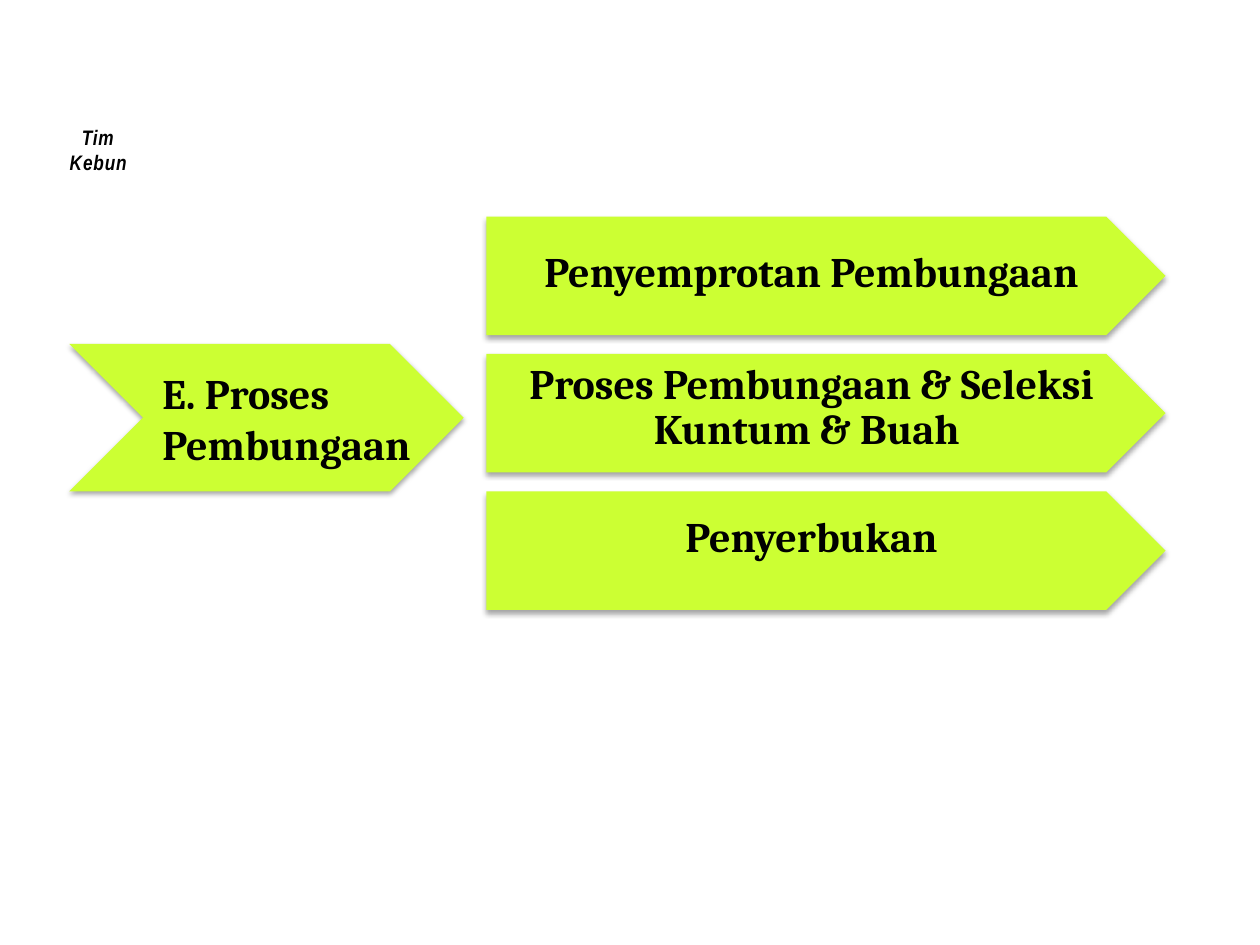
from lxml import etree
from pptx import Presentation
from pptx.dml.color import RGBColor
from pptx.enum.shapes import MSO_SHAPE
from pptx.enum.text import MSO_ANCHOR, PP_ALIGN
from pptx.oxml import parse_xml
from pptx.oxml.ns import nsdecls
from pptx.util import Inches, Pt

CHEVRON, PENTAGON = MSO_SHAPE.CHEVRON, MSO_SHAPE.PENTAGON
LEFT, CENTER = PP_ALIGN.LEFT, PP_ALIGN.CENTER
TOP, MIDDLE = MSO_ANCHOR.TOP, MSO_ANCHOR.MIDDLE

LIME, BLACK = "CCFF33", "000000"
SHADOW = (
    f'<a:effectLst {nsdecls("a")}>'
    '<a:outerShdw blurRad="39370" dist="22860" dir="5400000" rotWithShape="0">'
    f'<a:srgbClr val="{BLACK}"><a:alpha val="35000"/></a:srgbClr>'
    '</a:outerShdw></a:effectLst>'
)

presentation = Presentation()
presentation.slide_width, presentation.slide_height = Inches(10), Inches(7.5)
slide = presentation.slides.add_slide(presentation.slide_layouts[6])


def add_arrow(kind, left, top, width, height):
    shape = slide.shapes.add_shape(
        kind, Inches(left), Inches(top), Inches(width), Inches(height))
    shape.fill.solid()
    shape.fill.fore_color.rgb = RGBColor.from_string(LIME)
    shape.line.fill.background()
    shape._element.spPr.append(parse_xml(SHADOW))


def add_text(text, left, top, width, height, size=24, font="Cambria",
             align=CENTER, anchor=MIDDLE, italic=False, spacing=1.0):
    box = slide.shapes.add_textbox(
        Inches(left), Inches(top), Inches(width), Inches(height))
    frame = box.text_frame
    frame.word_wrap = True
    frame.vertical_anchor = anchor
    paragraph = frame.paragraphs[0]
    paragraph.alignment = align
    paragraph.line_spacing = spacing
    run = paragraph.add_run()
    run.text = text
    run.font.name, run.font.size = font, Pt(size)
    run.font.bold, run.font.italic = True, italic
    run.font.color.rgb = RGBColor.from_string(BLACK)
    return run


# Main process on the left
add_arrow(CHEVRON, 0.55, 2.73, 3.13, 1.17)
add_text("E. Proses Pembungaan", 1.19, 2.97, 2.22, 0.7, align=LEFT)

# Steps stacked on the right: label, line spacing, label shift from the arrow top
STEP_LEFT, STEP_TOP, STEP_PITCH = 3.86, 1.72, 1.09
steps = [
    ("Penyemprotan Pembungaan", 1.0, 0),
    ("Proses Pembungaan & Seleksi Kuntum & Buah ", 0.9, 0),
    ("Penyerbukan", 1.0, -0.08),
]
for row, (label, spacing, shift) in enumerate(steps):
    top = STEP_TOP + row * STEP_PITCH
    add_arrow(PENTAGON, STEP_LEFT, top, 5.39, 0.94)
    add_text(label, STEP_LEFT, top + shift, 5.16, 0.86, spacing=spacing)

# Team tag with letter spacing and a soft shadow
tag = add_text("Tim Kebun", 0.39, 0.94, 0.78, 0.3, size=12, font="Arial Narrow",
               anchor=TOP, italic=True)
tag_format = tag._r.rPr
tag_format.set("spc", "50")
tag_format.find("{*}solidFill").addnext(etree.fromstring(SHADOW))

presentation.save("out.pptx")
